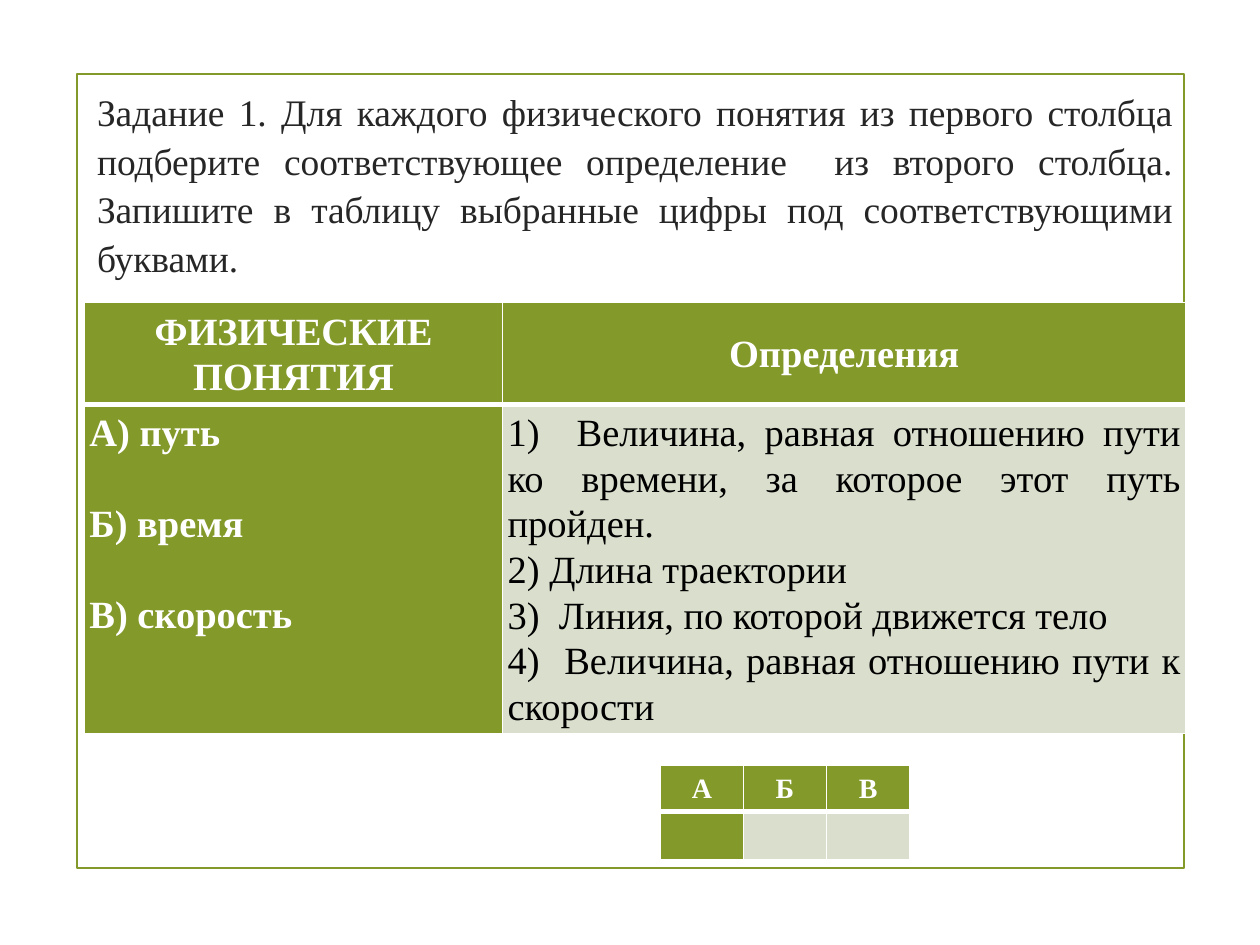
"""Build a physics matching task with a definitions table and an answer grid."""
from lxml import etree
from pptx import Presentation
from pptx.dml.color import RGBColor
from pptx.enum import shapes, text
from pptx.oxml import ns
from pptx.util import Inches, Pt

GREEN = RGBColor(0x83, 0x99, 0x2A)
PALE = RGBColor(0xD9, 0xDE, 0xCD)
WHITE = RGBColor(0xFF, 0xFF, 0xFF)
BLACK = RGBColor(0, 0, 0)
DARK = RGBColor(0x26, 0x26, 0x26)
FONT = "Times New Roman"
ALIGN = text.PP_ALIGN

TASK = ("Задание 1. Для каждого физического понятия из первого столбца "
        "подберите соответствующее определение  из второго столбца. "
        "Запишите в таблицу выбранные цифры под соответствующими буквами.")
TERMS = ["А) путь", "Б) время", "B) скорость"]
MEANINGS = [
    "1)  Величина, равная отношению пути ко времени, за которое этот путь пройден.",
    "2) Длина траектории",
    "3)  Линия, по которой движется тело",
    "4)  Величина, равная отношению пути к скорости",
]


def style(para, size, color, bold, align, lead):
    """Format a paragraph and its runs."""
    para.alignment = align
    para.line_spacing = lead
    for run in para.runs:
        font = run.font
        font.name, font.size, font.bold = FONT, Pt(size), bold
        font.color.rgb = color


def add_frame(slide):
    """Draw the green outline around the content."""
    frame = slide.shapes.add_shape(
        shapes.MSO_SHAPE.RECTANGLE,
        Inches(0.61), Inches(0.59), Inches(8.79), Inches(6.3))
    frame.shadow.inherit = False
    frame.fill.background()
    frame.line.color.rgb = GREEN
    frame.line.width = Pt(1.25)


def set_task(slide):
    """Place the task wording in the title."""
    title = slide.shapes.title
    title.left, title.top = Inches(0.67), Inches(0.63)
    title.width, title.height = Inches(8.74), Inches(1.7)
    frame = title.text_frame
    frame.text = TASK
    frame.word_wrap = True
    frame.auto_size = text.MSO_AUTO_SIZE.NONE
    frame.vertical_anchor = text.MSO_ANCHOR.TOP
    style(frame.paragraphs[0], 21.4, DARK, False, ALIGN.JUSTIFY, 1.08)


def set_edges(cell, row):
    """Give a cell white borders, thick below the header."""
    props = cell._tc.get_or_add_tcPr()
    top, bottom = (3, 1) if row else (1, 3)
    for side, width in (("L", 1), ("R", 1), ("T", top), ("B", bottom)):
        edge = etree.SubElement(props, ns.qn(f"a:ln{side}"), w=str(Pt(width)))
        fill = etree.SubElement(edge, ns.qn("a:solidFill"))
        etree.SubElement(fill, ns.qn("a:srgbClr"), val=str(WHITE))


def add_grid(slide, left, top, cols, rows):
    """Add a table with green header row and first column."""
    grid = slide.shapes.add_table(
        len(rows), len(cols), Inches(left), Inches(top),
        Inches(sum(cols)), Inches(sum(rows))).table
    for col, width in zip(grid.columns, cols):
        col.width = Inches(width)
    for i, height in enumerate(rows):
        grid.rows[i].height = Inches(height)
        for j in range(len(cols)):
            cell = grid.cell(i, j)
            set_edges(cell, i)
            cell.fill.solid()
            cell.fill.fore_color.rgb = PALE if i and j else GREEN
            cell.margin_left = cell.margin_right = Inches(0.04)
            cell.margin_top = cell.margin_bottom = Inches(0.04)
    return grid


def fill_head(grid, labels, size):
    """Write the centred header labels."""
    for cell, label in zip(grid.rows[0].cells, labels):
        cell.text_frame.text = label
        cell.vertical_anchor = text.MSO_ANCHOR.MIDDLE
        style(cell.text_frame.paragraphs[0], size, WHITE, True, ALIGN.CENTER, 1.07)


def fill_list(cell, items, color, bold, align, gap=0):
    """Write one paragraph per item with a gap between them."""
    cell.text_frame.text = "\n".join(items)
    for i, para in enumerate(cell.text_frame.paragraphs):
        style(para, 22, color, bold, align, 1.07)
        if i and gap:
            para.space_before = Pt(gap)


def main():
    """Build and save the slide."""
    deck = Presentation()
    deck.slide_width, deck.slide_height = Inches(10), Inches(7.5)
    slide = deck.slides.add_slide(deck.slide_layouts[5])
    add_frame(slide)
    set_task(slide)
    match = add_grid(slide, 0.67, 2.4, [3.32, 5.42], [0.81, 2.61])
    fill_head(match, ["ФИЗИЧЕСКИЕ ПОНЯТИЯ", "Определения"], 22)
    fill_list(match.cell(1, 0), TERMS, WHITE, True, ALIGN.LEFT, 26)
    fill_list(match.cell(1, 1), MEANINGS, BLACK, False, ALIGN.JUSTIFY)
    answer = add_grid(slide, 5.24, 6.07, [0.66] * 3, [0.37] * 2)
    fill_head(answer, "АБВ", 16)
    deck.save("out.pptx")


if __name__ == "__main__":
    main()
